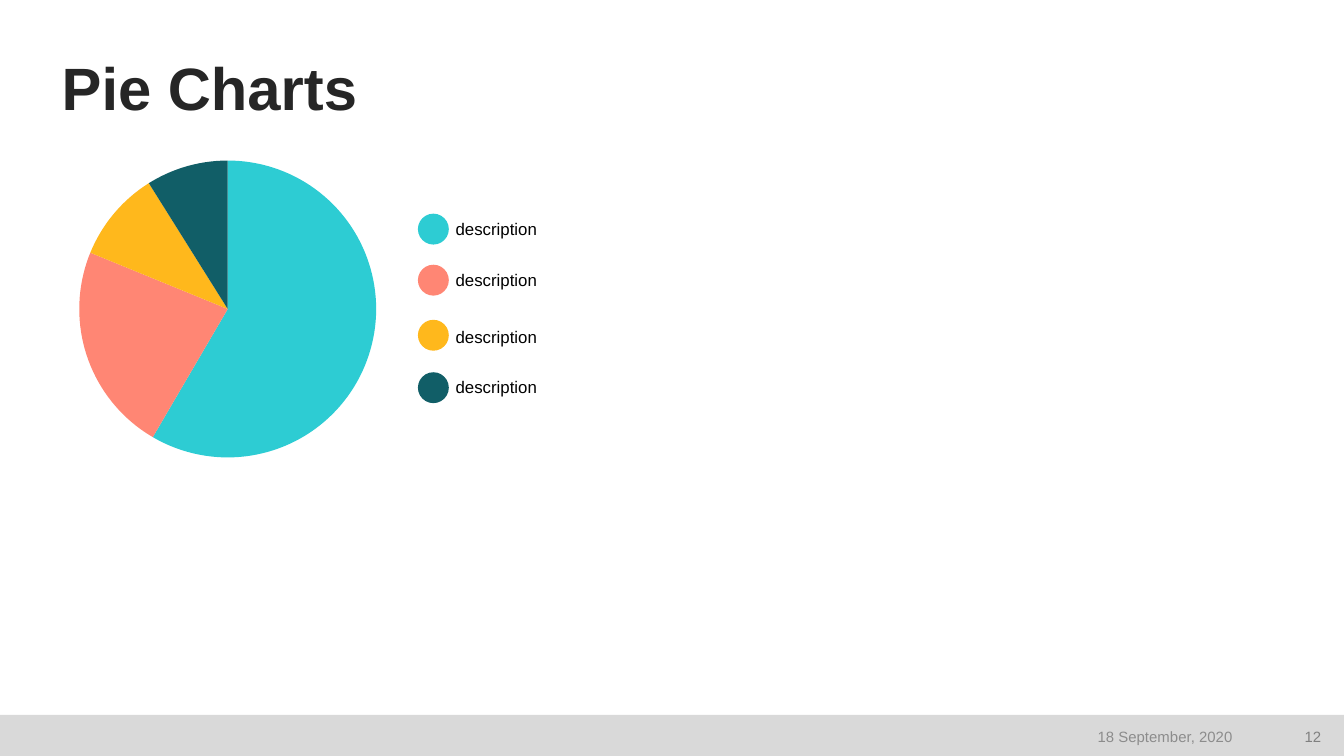
from lxml import etree
from pptx import Presentation
from pptx.chart.data import CategoryChartData
from pptx.dml.color import RGBColor
from pptx.enum.chart import XL_CHART_TYPE
from pptx.enum.shapes import MSO_SHAPE
from pptx.enum.text import MSO_ANCHOR, PP_ALIGN
from pptx.oxml.ns import qn
from pptx.util import Inches, Pt

FONT = "Arial"
BLACK = RGBColor(0x00, 0x00, 0x00)
TITLE_GREY = RGBColor(0x26, 0x26, 0x26)
BAR_GREY = RGBColor(0xD9, 0xD9, 0xD9)
DATE_GREY = RGBColor(0x8C, 0x8C, 0x8C)
NUMBER_GREY = RGBColor(0x80, 0x80, 0x80)
TURQUOISE = RGBColor(0x2D, 0xCC, 0xD3)
CORAL = RGBColor(0xFF, 0x86, 0x74)
AMBER = RGBColor(0xFF, 0xB8, 0x1C)
DARK_TEAL = RGBColor(0x11, 0x5E, 0x67)

# Share, colour, top of the legend marker and top of its label for each slice
SLICES = [
    (59, TURQUOISE, 1.59, 1.6),
    (23, CORAL, 1.97, 1.98),
    (10, AMBER, 2.38, 2.4),
    (9, DARK_TEAL, 2.77, 2.77),
]
MARKER_LEFT, MARKER_SIZE = 3.11, 0.23


def add_text(slide, text, left, top, width, height, *, size, color, bold=False,
             align=PP_ALIGN.LEFT, anchor=MSO_ANCHOR.TOP, insets=(0.1, 0.05),
             wrap=True, line_spacing=None):
    box = slide.shapes.add_textbox(Inches(left), Inches(top), Inches(width), Inches(height))
    frame = box.text_frame
    frame.word_wrap = wrap
    frame.vertical_anchor = anchor
    frame.margin_left = frame.margin_right = Inches(insets[0])
    frame.margin_top = frame.margin_bottom = Inches(insets[1])
    paragraph = frame.paragraphs[0]
    paragraph.text = text
    paragraph.alignment = align
    paragraph.line_spacing = line_spacing
    font = paragraph.runs[0].font
    font.name, font.size, font.bold = FONT, Pt(size), bold
    font.color.rgb = color


def add_filled_shape(slide, kind, left, top, width, height, color):
    shape = slide.shapes.add_shape(
        kind, Inches(left), Inches(top), Inches(width), Inches(height))
    shape.shadow.inherit = False
    shape.fill.solid()
    shape.fill.fore_color.rgb = color
    shape.line.fill.background()


def set_plot_layout(chart, **fractions):
    """Fix the inner plot area as fractions of the chart's size."""
    plot_area = chart._chartSpace.find(".//" + qn("c:plotArea"))
    layout = plot_area.find(qn("c:layout"))
    if layout is None:
        layout = etree.Element(qn("c:layout"))
        plot_area.insert(0, layout)
    manual = etree.SubElement(layout, qn("c:manualLayout"))
    settings = {"layoutTarget": "inner", "xMode": "edge", "yMode": "edge", **fractions}
    for tag, value in settings.items():
        etree.SubElement(manual, qn(f"c:{tag}")).set("val", str(value))


def add_pie(slide, left, top, width, height, diameter):
    data = CategoryChartData()
    data.categories = [str(number) for number in range(1, len(SLICES) + 1)]
    data.add_series("Series 1", [share for share, *_ in SLICES])
    chart = slide.shapes.add_chart(
        XL_CHART_TYPE.PIE, Inches(left), Inches(top), Inches(width), Inches(height), data).chart
    chart.has_legend = False
    chart.has_title = False
    chart.font.name, chart.font.size = FONT, Pt(10)
    chart.font.color.rgb = BLACK
    pie = chart.plots[0]
    pie.vary_by_categories = True
    for index, (_, color, *_) in enumerate(SLICES):
        slice_format = pie.series[0].points[index].format
        slice_format.fill.solid()
        slice_format.fill.fore_color.rgb = color
        slice_format.line.fill.background()
    w, h = diameter / width, diameter / height
    set_plot_layout(chart, x=(1 - w) / 2, y=(1 - h) / 2, w=w, h=h)


def add_legend_entry(slide, text, marker_top, label_top, color):
    add_filled_shape(slide, MSO_SHAPE.OVAL, MARKER_LEFT, marker_top,
                     MARKER_SIZE, MARKER_SIZE, color)
    add_text(slide, text, MARKER_LEFT + MARKER_SIZE, label_top, 0.75, 0.2,
             size=9, color=BLACK, insets=(0.05, 0.03), wrap=False)


def add_footer_text(slide, text, left, width, color):
    add_text(slide, text, left, 5.35, width, 0.26, size=8, color=color,
             align=PP_ALIGN.RIGHT, anchor=MSO_ANCHOR.MIDDLE)


def main():
    # Widescreen, 16:9
    presentation = Presentation()
    presentation.slide_width = Inches(10)
    presentation.slide_height = Inches(10) * 9 // 16
    slide = presentation.slides.add_slide(presentation.slide_layouts[6])

    # Footer bar and title
    add_filled_shape(slide, MSO_SHAPE.RECTANGLE, 0, 5.32, 10, 0.31, BAR_GREY)
    add_text(slide, "Pie Charts", 0.46, 0.4, 9.1, 0.52, size=32, color=TITLE_GREY,
             bold=True, anchor=MSO_ANCHOR.BOTTOM, insets=(0, 0), line_spacing=0.9)

    # Pie with its legend
    add_pie(slide, 0.26, 1.06, 2.87, 2.48, diameter=2.21)
    for _, color, marker_top, label_top in SLICES:
        add_legend_entry(slide, "description", marker_top, label_top, color)

    # Date and slide number
    add_footer_text(slide, "18 September, 2020", 7.02, 2.25, DATE_GREY)
    add_footer_text(slide, "12", 9.56, 0.37, NUMBER_GREY)

    presentation.save("out.pptx")


if __name__ == "__main__":
    main()
